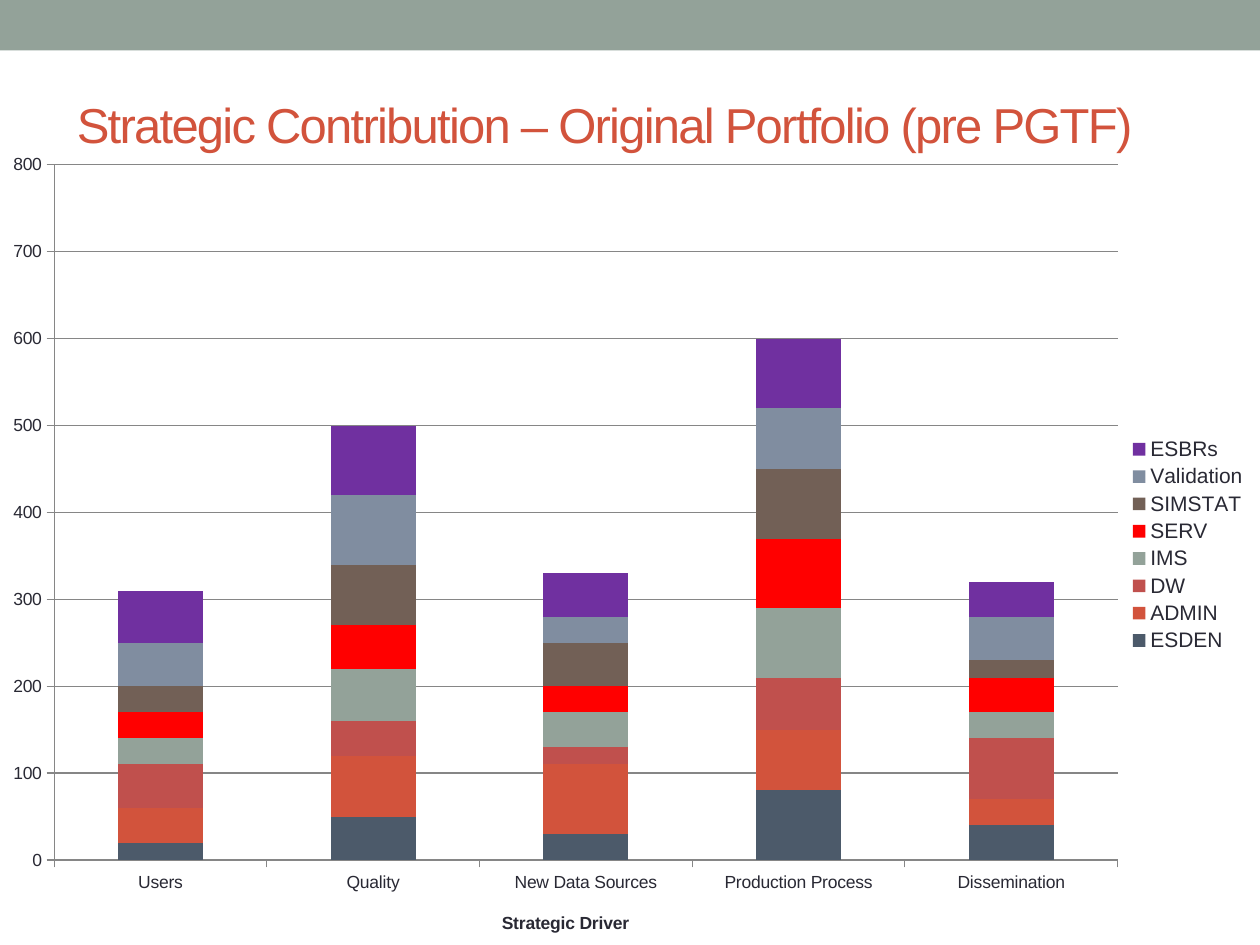
import pptx
import pptx.chart.data
import pptx.dml.color
import pptx.enum.chart
import pptx.enum.shapes
import pptx.enum.text
import pptx.oxml
import pptx.oxml.ns
import pptx.util
from dataclasses import dataclass

Pt = pptx.util.Pt


@dataclass(frozen=True)
class Theme:
    font: str = "Arial"
    band: str = "93A299"
    title: str = "D2533C"
    ink: str = "292934"
    rule: str = "868686"
    title_size: float = 28
    chart_size: float = 10
    legend_size: float = 12


THEME = Theme()
WIDTH, HEIGHT = 720, 540
PLOT_AREA = {"x": 0.043, "y": 0.025, "w": 0.844, "h": 0.869}

DRIVERS = ["Users", "Quality", "New Data Sources", "Production Process", "Dissemination"]
# Project: colour, contribution to each driver
PROJECTS = {
    "ESDEN": ("4C5A6A", [20, 50, 30, 80, 40]),
    "ADMIN": ("D2533C", [40, 70, 80, 70, 30]),
    "DW": ("C0504D", [50, 40, 20, 60, 70]),
    "IMS": ("93A299", [30, 60, 40, 80, 30]),
    "SERV": ("FF0000", [30, 50, 30, 80, 40]),
    "SIMSTAT": ("726056", [30, 70, 50, 80, 20]),
    "Validation": ("808DA0", [50, 80, 30, 70, 50]),
    "ESBRs": ("7030A0", [60, 80, 50, 80, 40]),
}


def rgb(color):
    return pptx.dml.color.RGBColor.from_string(color)


def style_font(font, size, color=THEME.ink, bold=False):
    font.name = THEME.font
    font.size = Pt(size)
    font.bold = bold
    font.color.rgb = rgb(color)


def write_text(frame, text, size, color=THEME.ink, bold=False, align=None, spacing=None):
    """Write one formatted paragraph; spacing is in points between letters."""
    para = frame.paragraphs[0]
    para.alignment = align
    span = para.add_run()
    span.text = text
    style_font(span.font, size, color, bold)
    if spacing is not None:
        span.font._element.set("spc", str(round(spacing * 100)))


def add_band(page, left, top, width, height):
    band = page.shapes.add_shape(
        pptx.enum.shapes.MSO_SHAPE.RECTANGLE, Pt(left), Pt(top), Pt(width), Pt(height))
    band.shadow.inherit = False
    band.fill.solid()
    band.fill.fore_color.rgb = rgb(THEME.band)
    band.line.fill.background()


def set_title(page, text, left, top, width, height):
    box = page.shapes.title
    box.left, box.top, box.width, box.height = Pt(left), Pt(top), Pt(width), Pt(height)
    frame = box.text_frame
    frame.word_wrap = True
    frame.auto_size = pptx.enum.text.MSO_AUTO_SIZE.NONE
    frame.vertical_anchor = pptx.enum.text.MSO_ANCHOR.MIDDLE
    write_text(frame, text, THEME.title_size, color=THEME.title,
               align=pptx.enum.text.PP_ALIGN.LEFT, spacing=-1)


def place_plot(chart, area):
    """Fix the inner plot area as fractions of the chart."""
    parts = "".join(f'<c:{key}Mode val="edge"/>' for key in "xy")
    parts += "".join(f'<c:{key} val="{value}"/>' for key, value in area.items())
    layout = pptx.oxml.parse_xml(
        f'<c:layout {pptx.oxml.ns.nsdecls("c")}><c:manualLayout>'
        f'<c:layoutTarget val="inner"/>{parts}</c:manualLayout></c:layout>')
    plot_area = chart._chartSpace.chart.plotArea
    for old in plot_area.findall(pptx.oxml.ns.qn("c:layout")):
        plot_area.remove(old)
    plot_area.insert(0, layout)


def style_line(line):
    line.color.rgb = rgb(THEME.rule)
    line.width = Pt(0.75)


def style_axes(chart, category_title):
    for axis in (chart.category_axis, chart.value_axis):
        axis.major_tick_mark = pptx.enum.chart.XL_TICK_MARK.OUTSIDE
        axis.minor_tick_mark = pptx.enum.chart.XL_TICK_MARK.NONE
        style_font(axis.tick_labels.font, THEME.chart_size)
        style_line(axis.format.line)
    write_text(chart.category_axis.axis_title.text_frame, category_title,
               THEME.chart_size, bold=True)
    values = chart.value_axis
    values.minimum_scale, values.maximum_scale, values.major_unit = 0, 800, 100
    values.tick_labels.number_format = "0"
    values.tick_labels.number_format_is_linked = False
    values.has_major_gridlines = True
    style_line(values.major_gridlines.format.line)


def add_stacked_chart(page, left, top, width, height):
    data = pptx.chart.data.CategoryChartData(number_format="0")
    data.categories = DRIVERS
    for name, (_, values) in PROJECTS.items():
        data.add_series(name, values)
    chart = page.shapes.add_chart(
        pptx.enum.chart.XL_CHART_TYPE.COLUMN_STACKED,
        Pt(left), Pt(top), Pt(width), Pt(height), data).chart
    style_font(chart.font, THEME.chart_size)
    chart.has_title = False

    # Columns
    plot = chart.plots[0]
    plot.gap_width, plot.overlap = 150, 100
    plot.vary_by_categories = False
    for series, (color, _) in zip(plot.series, PROJECTS.values()):
        series.format.fill.solid()
        series.format.fill.fore_color.rgb = rgb(color)

    # Axes and legend
    style_axes(chart, "Strategic Driver")
    chart.has_legend = True
    chart.legend.position = pptx.enum.chart.XL_LEGEND_POSITION.RIGHT
    chart.legend.include_in_layout = False
    style_font(chart.legend.font, THEME.legend_size)
    place_plot(chart, PLOT_AREA)


def main():
    deck = pptx.Presentation()
    deck.slide_width, deck.slide_height = Pt(WIDTH), Pt(HEIGHT)
    page = deck.slides.add_slide(deck.slide_layouts.get_by_name("Title Only"))

    # Header
    add_band(page, 0, 0, WIDTH, 28.8)
    set_title(page, "Strategic Contribution – Original Portfolio (pre PGTF)",
              36.72, 31.68, 648, 77.76)

    # Contribution of each project by driver
    chart_top = 82.8
    add_stacked_chart(page, 0, chart_top, WIDTH, HEIGHT - chart_top)

    deck.save("out.pptx")


if __name__ == "__main__":
    main()
